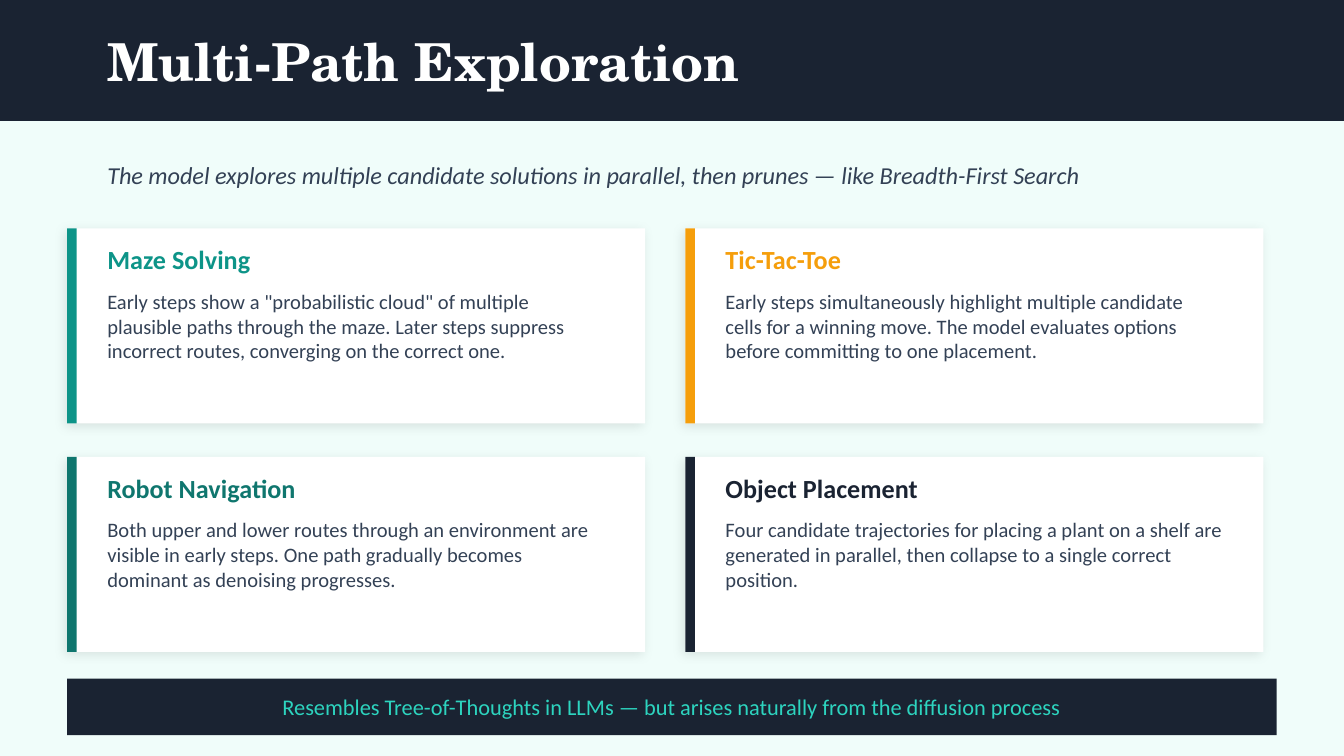
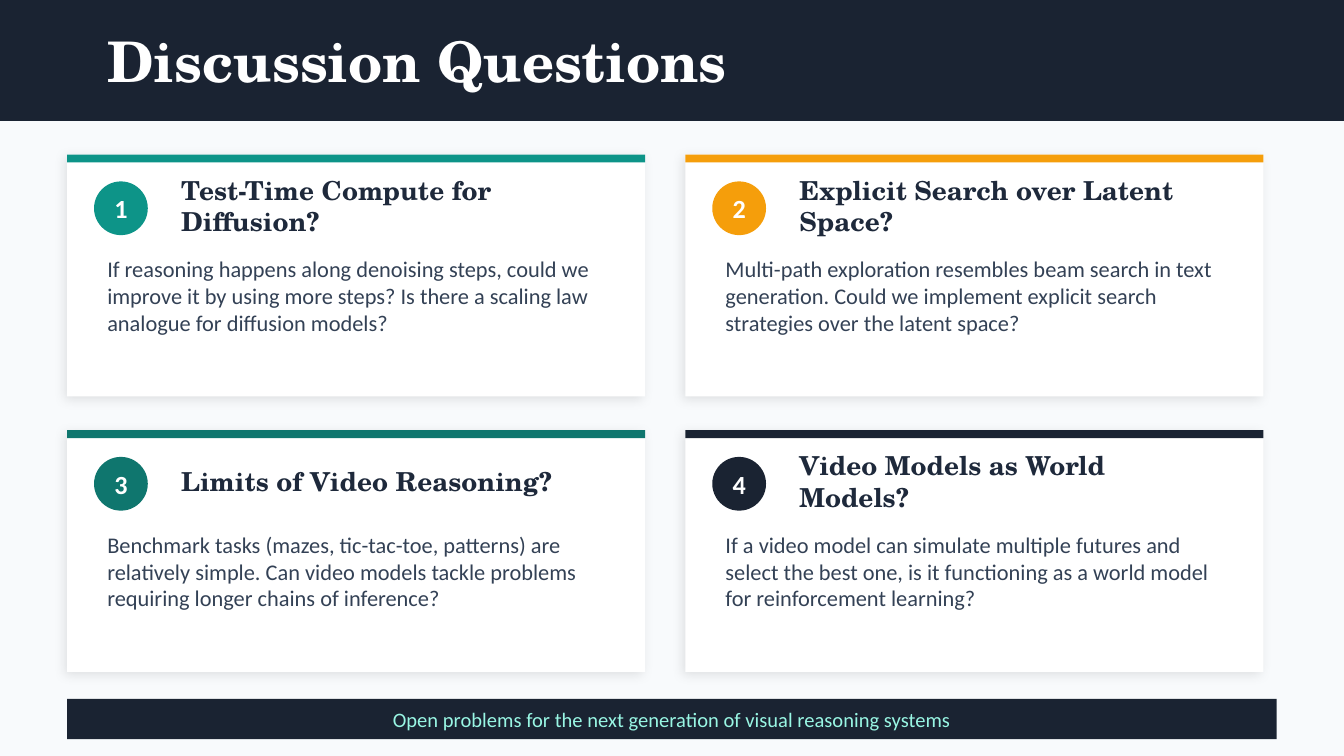
from lxml import etree
from pptx import Presentation
from pptx.dml.color import RGBColor
from pptx.enum.shapes import MSO_SHAPE
from pptx.enum.text import MSO_ANCHOR, PP_ALIGN
from pptx.oxml.ns import qn
from pptx.util import Inches, Pt

RECT, OVAL = MSO_SHAPE.RECTANGLE, MSO_SHAPE.OVAL
TOP, MIDDLE = MSO_ANCHOR.TOP, MSO_ANCHOR.MIDDLE
LEFT, CENTER = PP_ALIGN.LEFT, PP_ALIGN.CENTER


class Theme:
    serif, sans = "TeX Gyre Schola", "Calibri"
    navy, white, ink, slate = "1A2332", "FFFFFF", "1E293B", "334155"
    mint, cloud = "F0FDFA", "F8FAFC"
    aqua, pale = "2DD4BF", "99F6E4"
    accents = ["0D9488", "F59E0B", "0F766E", navy]
    lead, head = 13, 14


def add_box(slide, kind, x, y, w, h, fill, shadow=False):
    shape = slide.shapes.add_shape(kind, Inches(x), Inches(y), Inches(w), Inches(h))
    shape.shadow.inherit = False
    shape.fill.solid()
    shape.fill.fore_color.rgb = RGBColor.from_string(fill)
    shape.line.fill.background()
    if shadow:
        effects = shape._element.spPr.find(qn("a:effectLst"))
        outer = etree.SubElement(effects, qn("a:outerShdw"), blurRad=str(Pt(6)),
                                 dist=str(Pt(2)), dir=str(135 * 60000),
                                 algn="bl", rotWithShape="0")
        color = etree.SubElement(outer, qn("a:srgbClr"), val="000000")
        etree.SubElement(color, qn("a:alpha"), val="10000")


def add_text(slide, words, x, y, w, h, size, color, face=Theme.sans,
             bold=False, italic=False, align=LEFT, anchor=MIDDLE):
    frame = slide.shapes.add_textbox(Inches(x), Inches(y), Inches(w), Inches(h)).text_frame
    frame.word_wrap = True
    frame.vertical_anchor = anchor
    para = frame.paragraphs[0]
    para.text = words
    para.alignment = align
    font = para.font
    font.name, font.size, font.bold, font.italic = face, Pt(size), bold, italic
    font.color.rgb = RGBColor.from_string(color)


paths = [
    ("Maze Solving",
     'Early steps show a "probabilistic cloud" of multiple plausible paths through the maze. '
     "Later steps suppress incorrect routes, converging on the correct one."),
    ("Tic-Tac-Toe",
     "Early steps simultaneously highlight multiple candidate cells for a winning move. "
     "The model evaluates options before committing to one placement."),
    ("Robot Navigation",
     "Both upper and lower routes through an environment are visible in early steps. "
     "One path gradually becomes dominant as denoising progresses."),
    ("Object Placement",
     "Four candidate trajectories for placing a plant on a shelf are generated in parallel, "
     "then collapse to a single correct position."),
]
topics = [
    ("Test-Time Compute for Diffusion?",
     "If reasoning happens along denoising steps, could we improve it by using more steps? "
     "Is there a scaling law analogue for diffusion models?"),
    ("Explicit Search over Latent Space?",
     "Multi-path exploration resembles beam search in text generation. "
     "Could we implement explicit search strategies over the latent space?"),
    ("Limits of Video Reasoning?",
     "Benchmark tasks (mazes, tic-tac-toe, patterns) are relatively simple. "
     "Can video models tackle problems requiring longer chains of inference?"),
    ("Video Models as World Models?",
     "If a video model can simulate multiple futures and select the best one, "
     "is it functioning as a world model for reinforcement learning?"),
]

# Per slide: backdrop, title and size, footer text, top, height, size and colour
pages = [
    (Theme.mint, "Multi-Path Exploration", 28,
     "Resembles Tree-of-Thoughts in LLMs — but arises naturally from the diffusion process",
     5.05, 0.42, 12, Theme.aqua),
    (Theme.cloud, "Discussion Questions", 30,
     "Open problems for the next generation of visual reasoning systems",
     5.2, 0.3, 11, Theme.pale),
]

# Card grid
left, width, gap_x, gap_y, pad = 0.5, 4.3, 0.3, 0.25, 0.2
inner = width - 2 * pad

deck = Presentation()
deck.slide_width = Inches(10)
deck.slide_height = deck.slide_width * 9 // 16

# Backdrop and title band
slides = []
for back, title, size, *_ in pages:
    slide = deck.slides.add_slide(deck.slide_layouts[6])
    slide.background.fill.solid()
    slide.background.fill.fore_color.rgb = RGBColor.from_string(back)
    add_box(slide, RECT, 0, 0, 10, 0.9, Theme.navy)
    add_text(slide, title, 0.7, 0.1, 8.6, 0.7, size, Theme.white, Theme.serif, bold=True)
    slides.append(slide)
first, second = slides

# Slide 1: lead line and cards with a side stripe
add_text(first, "The model explores multiple candidate solutions in parallel, "
         "then prunes — like Breadth-First Search",
         0.7, 1.1, 8.6, 0.4, Theme.lead, Theme.slate, italic=True)
high = 1.45
for i, (head, body) in enumerate(paths):
    x = left + i % 2 * (width + gap_x)
    y = 1.7 + i // 2 * (high + gap_y)
    tint = Theme.accents[i]
    add_box(first, RECT, x, y, width, high, Theme.white, shadow=True)
    add_box(first, RECT, x, y, 0.07, high, tint)
    add_text(first, head, x + pad, y + 0.08, inner, 0.3, Theme.head, tint, bold=True)
    add_text(first, body, x + pad, y + 0.4, inner, 0.95, 11, Theme.slate, anchor=TOP)

# Slide 2: numbered cards with a top stripe
high = 1.8
for i, (head, body) in enumerate(topics):
    x = left + i % 2 * (width + gap_x)
    y = 1.15 + i // 2 * (high + gap_y)
    tint = Theme.accents[i]
    add_box(second, RECT, x, y, width, high, Theme.white, shadow=True)
    add_box(second, RECT, x, y, width, 0.06, tint)
    add_box(second, OVAL, x + pad, y + pad, 0.4, 0.4, tint)
    add_text(second, str(i + 1), x + pad, y + pad, 0.4, 0.4, Theme.head, Theme.white,
             bold=True, align=CENTER)
    add_text(second, head, x + 0.75, y + 0.18, 3.3, 0.4, Theme.head, Theme.ink,
             Theme.serif, bold=True)
    add_text(second, body, x + pad, y + 0.7, inner, 0.95, 12, Theme.slate, anchor=TOP)

# Footer bands
for slide, (*_, note, y, high, size, color) in zip(slides, pages):
    add_box(slide, RECT, 0.5, y, 9, high, Theme.navy)
    add_text(slide, note, 0.7, y, 8.6, high, size, color, align=CENTER)

deck.save("out.pptx")
